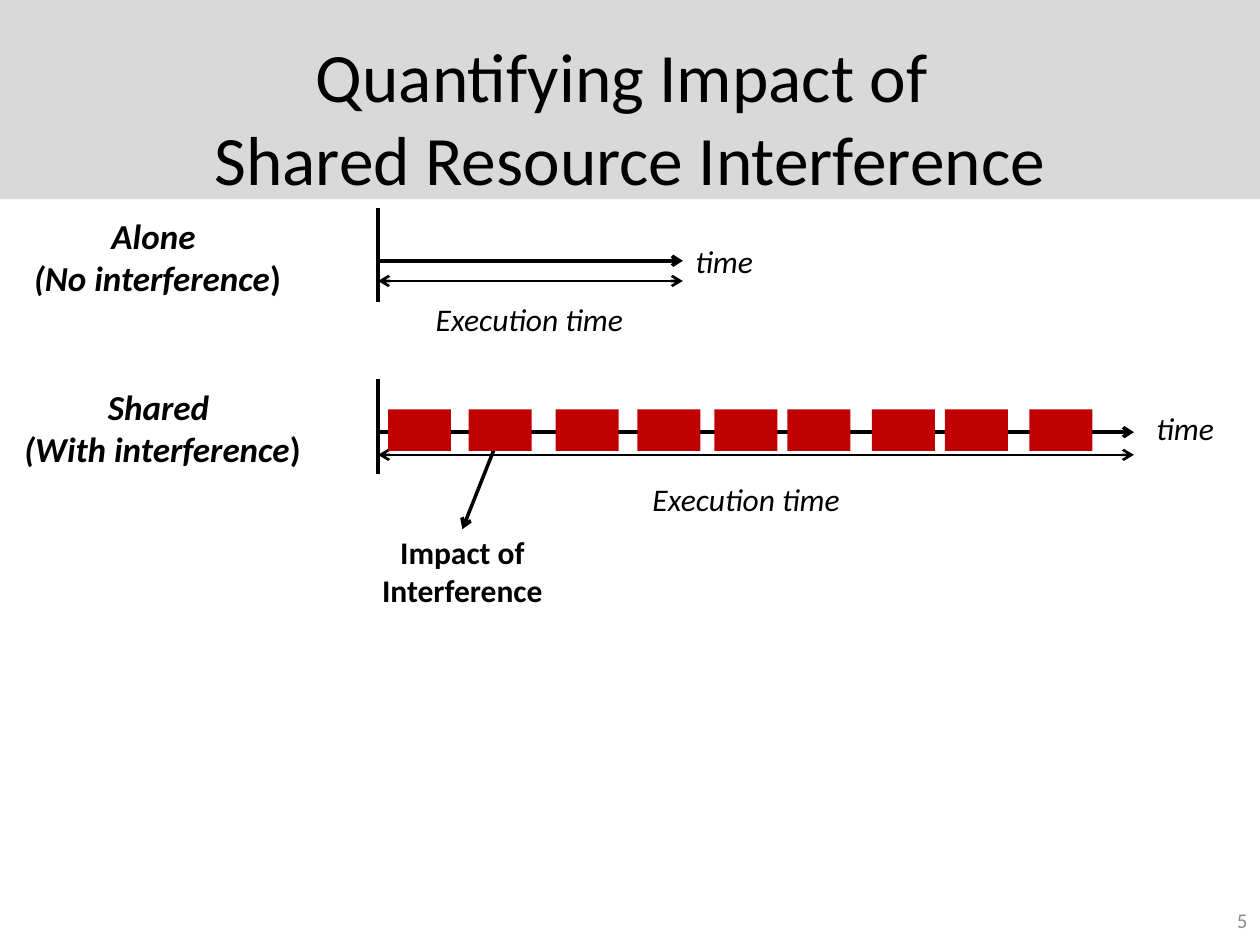
from dataclasses import dataclass

from lxml import etree
from pptx import Presentation
from pptx import util as u
from pptx.dml.color import RGBColor
from pptx.enum import shapes, text
from pptx.oxml.ns import qn
from pptx.slide import Slide

BLACK = RGBColor(0x00, 0x00, 0x00)
GRAY = RGBColor(0x8C, 0x8C, 0x8C)
BAND = RGBColor(0xD9, 0xD9, 0xD9)
RED = RGBColor(0xC0, 0x00, 0x00)
ALIGN = text.PP_ALIGN
ANCHOR = text.MSO_ANCHOR

AXIS_X = 3
STALL_STARTS = (3.08, 3.72, 4.41, 5.06, 5.67, 6.25, 6.92, 7.5, 8.17)


@dataclass
class Canvas:
    slide: Slide
    font: str = "Calibri"

    def rect(self, left, top, width, height, color):
        box = self.slide.shapes.add_shape(
            shapes.MSO_SHAPE.RECTANGLE, *map(u.Inches, (left, top, width, height)))
        box.shadow.inherit = False
        box.fill.solid()
        box.fill.fore_color.rgb = color
        box.line.fill.background()

    def line(self, start, end, weight=2, head=False, tail=False):
        """Draw a line; head and tail put arrows at its start and end."""
        link = self.slide.shapes.add_connector(
            shapes.MSO_CONNECTOR.STRAIGHT, *map(u.Inches, (*start, *end)))
        link.line.color.rgb = BLACK
        link.line.width = u.Pt(weight)
        outline = link.line._get_or_add_ln()
        for tag, wanted in (("a:headEnd", head), ("a:tailEnd", tail)):
            if wanted:
                etree.SubElement(outline, qn(tag), type="arrow")
        etree.SubElement(link._element.spPr, qn("a:effectLst"))

    def label(self, left, top, width, height, paragraphs, size=18, color=BLACK,
              align=ALIGN.LEFT, anchor=ANCHOR.TOP, bold=False):
        """Each paragraph is a list of (text, italic) runs; a newline breaks a line."""
        frame = self.slide.shapes.add_textbox(
            *map(u.Inches, (left, top, width, height))).text_frame
        frame.word_wrap = True
        frame.vertical_anchor = anchor
        for number, runs in enumerate(paragraphs):
            paragraph = frame.add_paragraph() if number else frame.paragraphs[0]
            paragraph.alignment = align
            for words, italic in runs:
                for part, line_text in enumerate(words.split("\n")):
                    if part:
                        paragraph.add_line_break()
                    run = paragraph.add_run()
                    run.text = line_text
                    run.font.name = self.font
                    run.font.size = u.Pt(size)
                    run.font.bold = bold
                    run.font.italic = italic
                    run.font.color.rgb = color

    def timeline(self, top, end, axis_y, span_y, case, note, case_width,
                 time_at, execution_at):
        """Draw one case: its name, time axis and execution time span."""
        self.label(0, top, case_width, 0.77,
                   [[(case + " ", True)], [("(" + note, True), (")", False)]],
                   size=20, align=ALIGN.CENTER, bold=True)
        self.line((AXIS_X, top), (AXIS_X, top + 0.75))
        self.line((AXIS_X, axis_y), (end, axis_y), tail=True)
        self.label(*time_at, 0.92, 0.4, [[("time", True)]])
        self.line((AXIS_X, span_y), (end, span_y), 1.5, head=True, tail=True)
        self.label(*execution_at, 1.92, 0.4, [[("Execution time", True)]])


def main():
    deck = Presentation()
    deck.slide_width, deck.slide_height = u.Inches(10), u.Inches(7.5)
    canvas = Canvas(deck.slides.add_slide(deck.slide_layouts[6]))

    canvas.rect(0, 0, 10, 1.58, BAND)
    canvas.label(0.5, 0.3, 9, 1.25,
                 [[("Quantifying Impact of \nShared Resource Interference", False)]],
                 size=39.6, align=ALIGN.CENTER, anchor=ANCHOR.MIDDLE)
    canvas.label(7.67, 7.1, 2.33, 0.4, [[("5", False)]], size=12, color=GRAY,
                 align=ALIGN.RIGHT, anchor=ANCHOR.MIDDLE)

    canvas.timeline(1.65, 5.42, 2.07, 2.23, "Alone", "No interference", 2.5,
                    time_at=(5.42, 1.87), execution_at=(3.36, 2.33))
    canvas.timeline(3.01, 9, 3.43, 3.61, "Shared", "With interference", 2.58,
                    time_at=(9.08, 3.2), execution_at=(5.08, 3.76))

    canvas.line((3.92, 3.57), (3.67, 4.2), tail=True)
    canvas.label(2.92, 4.18, 1.5, 0.71, [[("Impact of Interference", False)]],
                 align=ALIGN.CENTER, bold=True)
    for start in STALL_STARTS:
        canvas.rect(start, 3.25, 0.5, 0.33, RED)

    deck.save("out.pptx")


if __name__ == "__main__":
    main()
